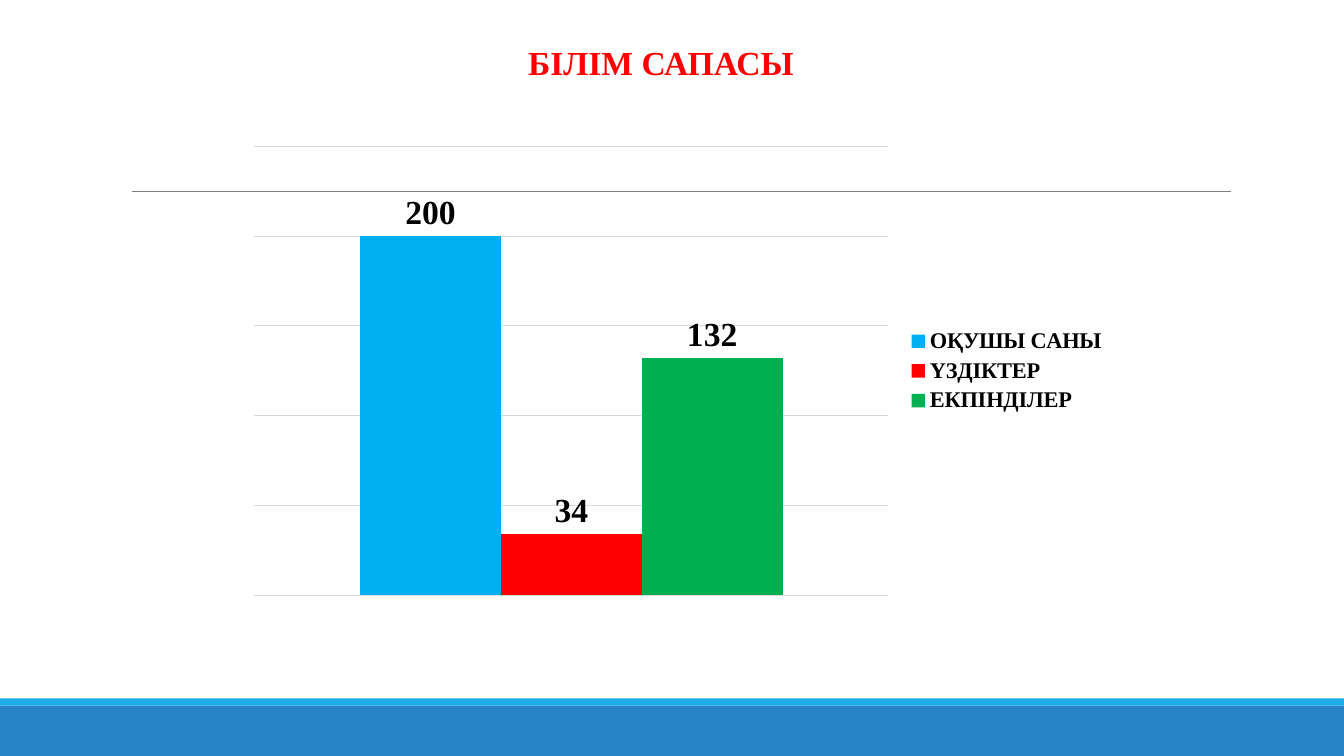
from lxml import etree
from pptx import Presentation
from pptx.chart.data import CategoryChartData
from pptx.dml.color import RGBColor
from pptx.enum.chart import XL_CHART_TYPE, XL_LABEL_POSITION, XL_LEGEND_POSITION
from pptx.enum.shapes import MSO_CONNECTOR, MSO_SHAPE
from pptx.enum.text import MSO_ANCHOR, PP_ALIGN
from pptx.oxml.ns import qn
from pptx.util import Inches, Pt

COLUMN = XL_CHART_TYPE.COLUMN_CLUSTERED
OUTSIDE = XL_LABEL_POSITION.OUTSIDE_END
RIGHT = XL_LEGEND_POSITION.RIGHT
STRAIGHT = MSO_CONNECTOR.STRAIGHT
RECT = MSO_SHAPE.RECTANGLE
TOP = MSO_ANCHOR.TOP
CENTER = PP_ALIGN.CENTER

WIDE, HIGH = 13.33, 7.5
SERIF = "Times New Roman"
GRADES = [
    ("ОҚУШЫ САНЫ", 200, "00B0F0"),
    ("ҮЗДІКТЕР", 34, "FF0000"),
    ("ЕКПІНДІЛЕР", 132, "00B050"),
]
PLOT = {"x": 0.02, "y": 0.02, "w": 0.72, "h": 0.96}


def paint(target, color):
    target.solid()
    target.fore_color.rgb = RGBColor.from_string(color)


def style(font, size, color):
    font.name = SERIF
    font.size = Pt(size)
    font.bold = True
    paint(font.fill, color)


def add_band(slide, left, top, width, height, color):
    band = slide.shapes.add_shape(RECT, *map(Inches, (left, top, width, height)))
    band.shadow.inherit = False
    paint(band.fill, color)
    band.line.fill.background()


def add_rule(slide, left, top, width):
    rule = slide.shapes.add_connector(
        STRAIGHT, *map(Inches, (left, top, left + width, top)))
    paint(rule.line.fill, "808080")
    rule.line.width = Pt(0.5)
    etree.SubElement(rule.element.spPr, qn("a:effectLst"))


def add_title(slide, left, top, width, height):
    title = slide.shapes.title
    title.left, title.top, title.width, title.height = map(
        Inches, (left, top, width, height))
    frame = title.text_frame
    frame.text = "БІЛІМ САПАСЫ"
    frame.word_wrap = True
    frame.vertical_anchor = TOP
    line = frame.paragraphs[0]
    line.alignment = CENTER
    style(line.runs[0].font, 24, "FF0000")


def set_plot(chart):
    area = chart.element.find(".//" + qn("c:plotArea"))
    for old in area.findall(qn("c:layout")):
        area.remove(old)
    layout = etree.Element(qn("c:layout"))
    manual = etree.SubElement(layout, qn("c:manualLayout"))
    marks = {"layoutTarget": "inner", "xMode": "edge", "yMode": "edge", **PLOT}
    for name, value in marks.items():
        etree.SubElement(manual, qn("c:" + name)).set("val", str(value))
    area.insert(0, layout)


def add_bars(slide, left, top, width, height):
    data = CategoryChartData()
    data.categories = ["1"]
    for name, value, _ in GRADES:
        data.add_series(name, [value])
    frame = slide.shapes.add_chart(
        COLUMN, *map(Inches, (left, top, width, height)), data)
    chart = frame.chart
    chart.has_title = False
    chart.font.name = "Calibri"
    chart.font.size = Pt(10)
    paint(chart.font.fill, "000000")

    chart.category_axis.visible = False
    scale = chart.value_axis
    scale.visible = False
    scale.minimum_scale, scale.maximum_scale, scale.major_unit = 0, 250, 50
    scale.has_major_gridlines = True
    grid = scale.major_gridlines.format.line
    paint(grid.fill, "D9D9D9")
    grid.width = Pt(0.75)

    plot = chart.plots[0]
    plot.gap_width = 150
    plot.overlap = 0
    plot.vary_by_categories = False
    for series, (_, _, color) in zip(plot.series, GRADES):
        paint(series.format.fill, color)
        labels = series.data_labels
        labels.show_value = True
        labels.position = OUTSIDE
        style(labels.font, 24, "000000")

    chart.has_legend = True
    legend = chart.legend
    legend.position = RIGHT
    legend.include_in_layout = False
    style(legend.font, 16, "000000")
    set_plot(chart)


def main():
    deck = Presentation()
    deck.slide_width, deck.slide_height = Inches(WIDE), Inches(HIGH)
    slide = deck.slides.add_slide(deck.slide_layouts[5])
    add_band(slide, 0, 7, WIDE, 0.5, "2683C6")
    add_band(slide, 0, 6.93, WIDE, 0.07, "1CADE4")
    add_rule(slide, 1.31, 1.9, 10.9)
    add_title(slide, 3.22, 0.37, 6.67, 0.91)
    add_bars(slide, 2.35, 1.36, 8.73, 4.64)
    deck.save("out.pptx")


if __name__ == "__main__":
    main()
